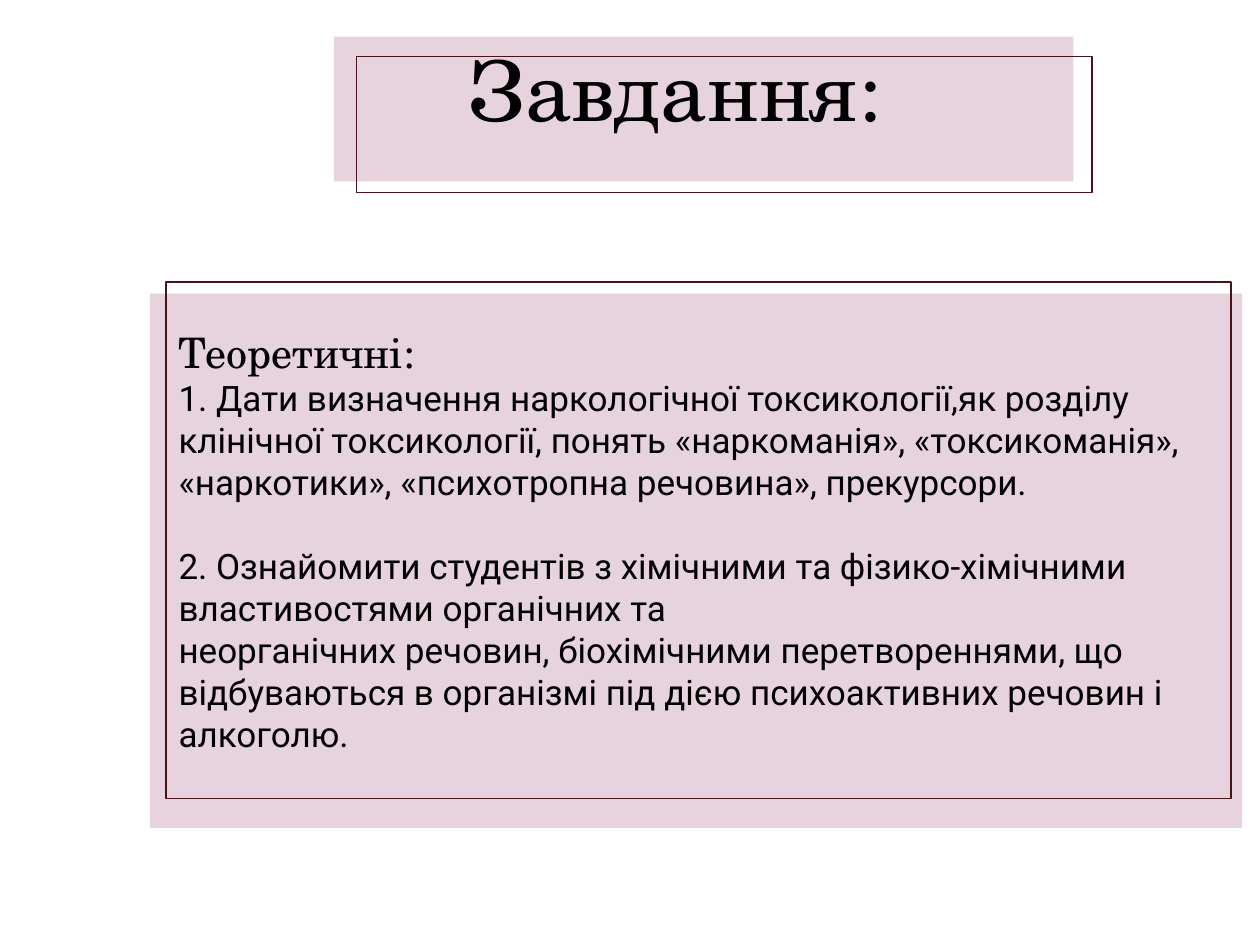
from pptx import Presentation
from pptx.dml.color import RGBColor
from pptx.enum.shapes import MSO_SHAPE
from pptx.enum.text import MSO_ANCHOR, PP_ALIGN
from pptx.util import Cm, Pt

PINK = RGBColor(0xE6, 0xD3, 0xDE)
MAROON = RGBColor(0x48, 0x14, 0x19)
BLACK = RGBColor(0, 0, 0)
SERIF, SANS = "TeX Gyre Schola", "Roboto"

TASKS = [
    "1. Дати визначення наркологічної токсикології,як розділу клінічної "
    "токсикології, понять «наркоманія», «токсикоманія», «наркотики», "
    "«психотропна речовина», прекурсори.",
    "2. Ознайомити студентів з хімічними та фізико-хімічними "
    "властивостями органічних та",
    "неорганічних речовин, біохімічними перетвореннями, що відбуваються "
    "в організмі під дією психоактивних речовин і алкоголю.",
]
TASK_GAPS = [0, 24, 0]


def add_rectangle(slide, left, top, width, height, fill=None, line=None):
    rectangle = slide.shapes.add_shape(
        MSO_SHAPE.RECTANGLE, Cm(left), Cm(top), Cm(width), Cm(height))
    rectangle.shadow.inherit = False
    if fill is None:
        rectangle.fill.background()
    else:
        rectangle.fill.solid()
        rectangle.fill.fore_color.rgb = fill
    if line is None:
        rectangle.line.fill.background()
    else:
        rectangle.line.color.rgb = line
        rectangle.line.width = Pt(1)


def add_text_frame(slide, left, top, width, height, anchor=MSO_ANCHOR.TOP):
    box = slide.shapes.add_textbox(Cm(left), Cm(top), Cm(width), Cm(height))
    frame = box.text_frame
    frame.word_wrap = True
    frame.vertical_anchor = anchor
    return frame


def write(paragraph, text, *, font, size, align=PP_ALIGN.LEFT,
          spacing=1.0, before=0):
    paragraph.alignment = align
    paragraph.line_spacing = spacing
    if before:
        paragraph.space_before = Pt(before)
    run = paragraph.add_run()
    run.text = text
    run.font.name = font
    run.font.size = Pt(size)
    run.font.color.rgb = BLACK


def main():
    presentation = Presentation()
    presentation.slide_width, presentation.slide_height = Cm(25.4), Cm(19.05)
    slide = presentation.slides.add_slide(presentation.slide_layouts[6])

    # Heading on its panel with an offset outline
    add_rectangle(slide, 6.73, 0.74, 14.91, 2.92, fill=PINK)
    add_rectangle(slide, 7.19, 1.14, 14.83, 2.74, line=MAROON)
    heading = add_text_frame(slide, 2.67, 0.99, 21.89, 1.83, MSO_ANCHOR.MIDDLE)
    heading.margin_top = heading.margin_bottom = 0
    write(heading.paragraphs[0], "Завдання:", font=SERIF, size=47.7,
          align=PP_ALIGN.CENTER, spacing=0.9)

    # Theoretical tasks on their panel with an offset outline
    add_rectangle(slide, 3.02, 5.92, 22.02, 10.77, fill=PINK)
    add_rectangle(slide, 3.35, 5.69, 21.46, 10.41, line=MAROON)
    tasks = add_text_frame(slide, 3.35, 6.45, 22.5, 9.83)
    write(tasks.paragraphs[0], "Теоретичні:", font=SERIF, size=24)
    for task, gap in zip(TASKS, TASK_GAPS):
        write(tasks.add_paragraph(), task, font=SANS, size=20, before=gap)

    presentation.save("out.pptx")


if __name__ == "__main__":
    main()
